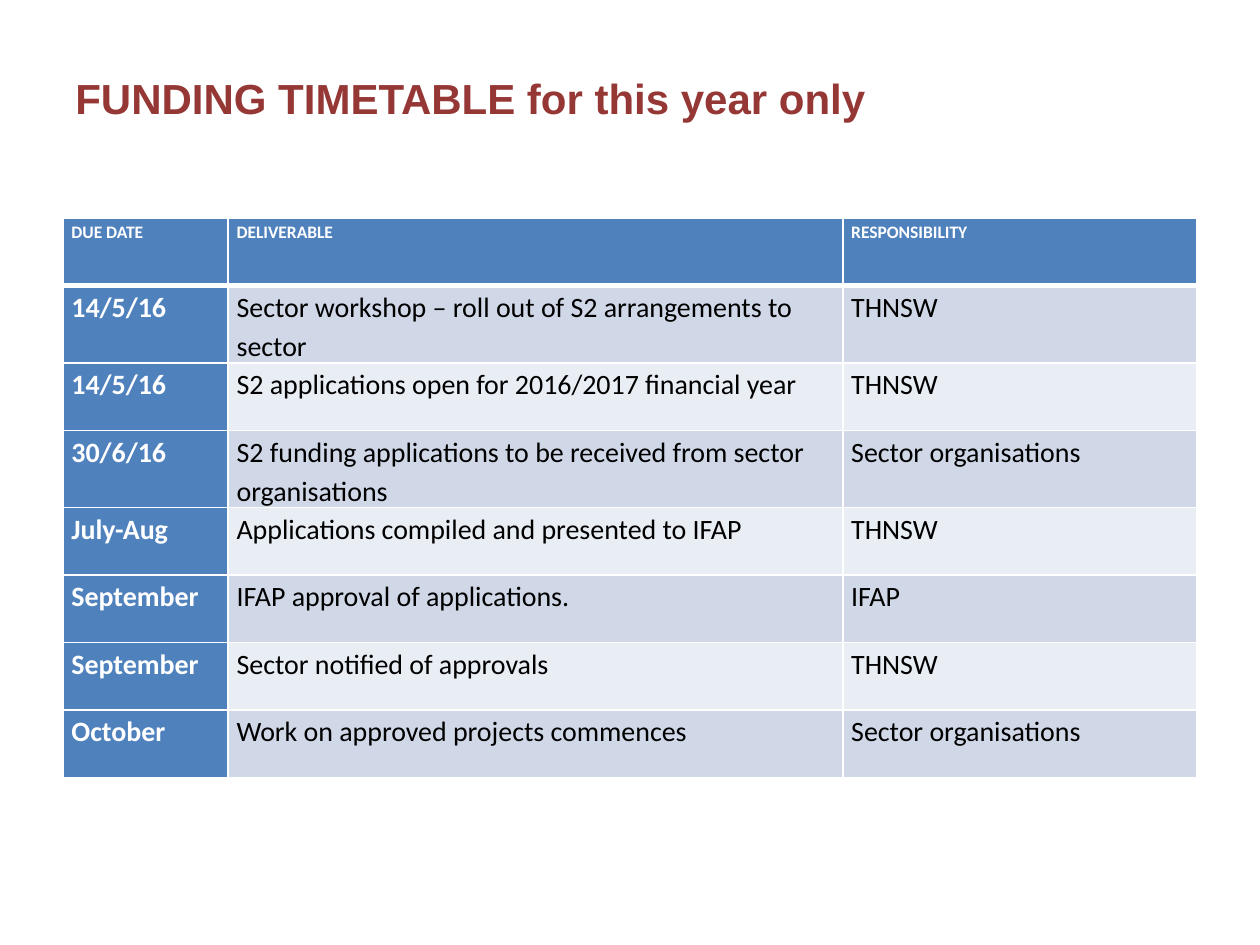
import pptx
import pptx.dml.color
import pptx.enum.text
import pptx.oxml
import pptx.oxml.ns
import pptx.util

Cm = pptx.util.Cm
COLOURS = {
    "title": "953735",
    "header": "4F81BD",
    "odd": "D0D8E8",
    "even": "E9EDF4",
    "light": "FFFFFF",
    "dark": "000000",
}
ROWS = [
    ("DUE DATE", "DELIVERABLE", "RESPONSIBILITY"),
    ("14/5/16", "Sector workshop – roll out of S2 arrangements to sector", "THNSW"),
    ("14/5/16", "S2 applications open for 2016/2017 financial year", "THNSW"),
    ("30/6/16", "S2 funding applications to be received from sector organisations",
     "Sector organisations"),
    ("July-Aug", "Applications compiled and presented to IFAP", "THNSW"),
    ("September", "IFAP approval of applications.", "IFAP"),
    ("September", "Sector notified of approvals", "THNSW"),
    ("October", "Work on approved projects commences", "Sector organisations"),
]
COLUMN_WIDTHS = [3.33, 12.39, 7.14]
ROW_HEIGHT = 1.36


def write(frame, text, *, size, colour, font="Calibri", bold=False, spacing=1.0):
    para = frame.paragraphs[0]
    para.line_spacing = spacing
    span = para.add_run()
    span.text = text
    span.font.name = font
    span.font.size = pptx.util.Pt(size)
    span.font.bold = bold
    span.font.color.rgb = pptx.dml.color.RGBColor.from_string(COLOURS[colour])


def add_borders(cell, bottom):
    """Draw white lines round a cell; they must precede its fill."""
    properties = cell._tc.get_or_add_tcPr()
    for index, side in enumerate("LRTB"):
        points = bottom if side == "B" else 1
        line = pptx.oxml.parse_xml(
            f'<a:ln{side} {pptx.oxml.ns.nsdecls("a")} w="{pptx.util.Pt(points)}">'
            f'<a:solidFill><a:srgbClr val="{COLOURS["light"]}"/></a:solidFill>'
            f'</a:ln{side}>')
        properties.insert(index, line)


deck = pptx.Presentation()
deck.slide_width, deck.slide_height = Cm(25.4), Cm(19.05)
page = deck.slides.add_slide(deck.slide_layouts[6])

# Title
box = page.shapes.add_textbox(Cm(1.27), Cm(0.76), Cm(22.86), Cm(2.41))
box.text_frame.word_wrap = True
box.text_frame.vertical_anchor = pptx.enum.text.MSO_ANCHOR.MIDDLE
write(box.text_frame, "FUNDING TIMETABLE for this year only",
      size=24, colour="title", font="Arial", bold=True)

# Timetable
table = page.shapes.add_table(
    len(ROWS), len(COLUMN_WIDTHS), Cm(1.27), Cm(4.4),
    Cm(sum(COLUMN_WIDTHS)), Cm(ROW_HEIGHT * len(ROWS))).table
table.first_col = True
for column, width in zip(table.columns, COLUMN_WIDTHS):
    column.width = Cm(width)

for r, texts in enumerate(ROWS):
    table.rows[r].height = Cm(ROW_HEIGHT)
    for c, text in enumerate(texts):
        cell = table.cell(r, c)
        heading = r == 0 or c == 0
        cell.margin_left = cell.margin_right = Cm(0.17)
        cell.margin_top = cell.margin_bottom = Cm(0)
        fill = "header" if heading else "odd" if r % 2 else "even"
        cell.fill.solid()
        cell.fill.fore_color.rgb = pptx.dml.color.RGBColor.from_string(COLOURS[fill])
        add_borders(cell, bottom=3 if r == 0 else 1)
        write(cell.text_frame, text, size=10 if r == 0 else 16,
              colour="light" if heading else "dark", bold=heading, spacing=1.15)

deck.save("out.pptx")
